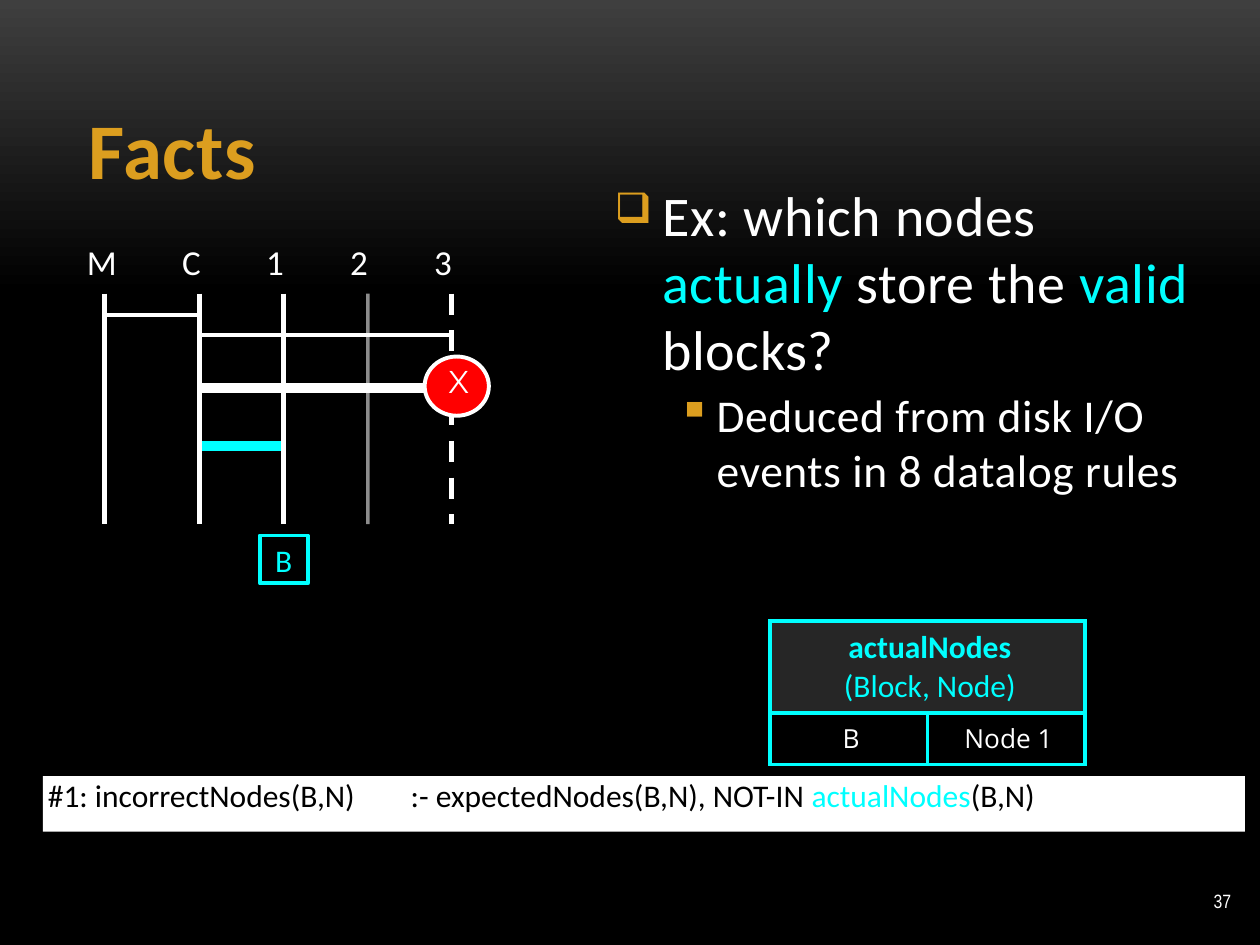
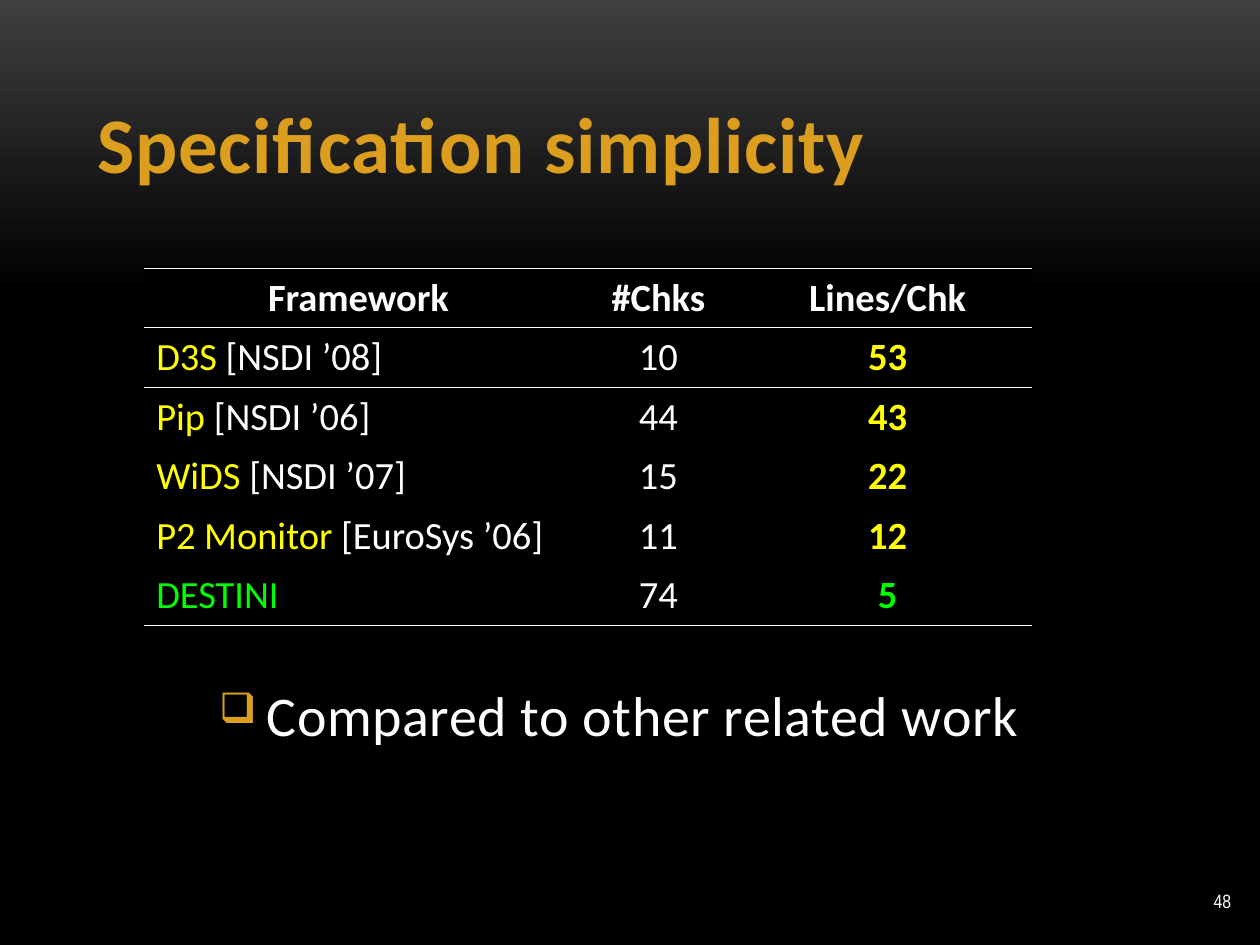
import dataclasses

import lxml.etree
import pptx
import pptx.dml.color
import pptx.enum.dml
import pptx.enum.shapes
import pptx.enum.text
import pptx.oxml.ns
import pptx.util

Align = pptx.enum.text.PP_ALIGN
Anchor = pptx.enum.text.MSO_ANCHOR
Shape = pptx.enum.shapes.MSO_SHAPE
Pt = pptx.util.Pt
qn = pptx.oxml.ns.qn

COLS = 100  # the slide is a grid of 100 columns by 75 square rows
WIDE, HIGH = pptx.util.Inches(10), pptx.util.Inches(7.5)
PLAIN_TABLE = "{2D5ABB26-0587-4C30-8999-92F81FD0307C}"


@dataclasses.dataclass(frozen=True)
class Theme:
    face: str = "Calibri"
    foot_face: str = "Arial Narrow"
    cell_face: str = "Open Sans"
    mark_face: str = "Montserrat"
    gold: str = "DC9E1F"
    white: str = "FFFFFF"
    black: str = "000000"
    gray: str = "3F3F3F"
    dark: str = "262626"
    cyan: str = "00FFFF"
    red: str = "FF0000"
    yellow: str = "FFFF00"
    green: str = "00FF00"
    title: int = 45
    body: int = 32
    sub: int = 26
    grid: int = 22
    lane: int = 20
    label: int = 18
    cell: int = 15
    foot: int = 11


T = Theme()


def unit(count):
    """Length of a number of grid columns or rows."""
    return round(WIDE * count / COLS)


def area(*counts):
    return [unit(count) for count in counts]


def rgb(code):
    return pptx.dml.color.RGBColor.from_string(code)


def add_node(parent, tag, **attrs):
    return lxml.etree.SubElement(parent, qn(tag), attrs)


def say(par, text, size, color=T.white, face=T.face, bold=False, space=0):
    """Add one run; space is the letter spacing in points."""
    run = par.add_run()
    run.text = text
    run.font.size, run.font.name, run.font.bold = Pt(size), face, bold
    run.font.color.rgb = rgb(color)
    if space:
        run._r.get_or_add_rPr().set("spc", str(round(space * 100)))


def indent(par, left, first=0):
    props = par._p.get_or_add_pPr()
    props.set("marL", str(unit(left)))
    props.set("indent", str(unit(first)))
    return props


def set_frame(frame, anchor=Anchor.TOP, pad=(1, 0.5, 1, 0.5)):
    """Wrap the text and set insets: left, top, right, bottom."""
    frame.word_wrap = True
    frame.auto_size = pptx.enum.text.MSO_AUTO_SIZE.NONE
    frame.vertical_anchor = anchor
    (frame.margin_left, frame.margin_top,
     frame.margin_right, frame.margin_bottom) = area(*pad)
    return frame.paragraphs[0]


def add_text(slide, box, **look):
    return set_frame(slide.shapes.add_textbox(*area(*box)).text_frame, **look)


def add_shape(slide, kind, box, fill, edge=None, **look):
    """Draw a filled shape and return its first paragraph."""
    shape = slide.shapes.add_shape(kind, *area(*box))
    shape.shadow.inherit = False
    shape.fill.solid()
    shape.fill.fore_color.rgb = rgb(fill)
    if edge:
        shape.line.color.rgb = rgb(edge)
        shape.line.width = Pt(2.25)
    else:
        shape.line.fill.background()
    return set_frame(shape.text_frame, **look)


def add_line(slide, start, end, width, color=T.white, dash=False, alpha=None):
    line = slide.shapes.add_connector(
        pptx.enum.shapes.MSO_CONNECTOR.STRAIGHT, *area(*start, *end))
    line.line.color.rgb = rgb(color)
    line.line.width = Pt(width)
    if dash:
        line.line.dash_style = pptx.enum.dml.MSO_LINE.DASH
    props = line._element.spPr
    if alpha:
        tint = next(props.iter(qn("a:srgbClr")))
        add_node(tint, "a:alpha", val=str(alpha * 1000))
    add_node(props, "a:effectLst")


def add_point(par, runs, size, mark, left, hang, before, scale=100):
    """Fill a bulleted paragraph with (text, colour) runs."""
    par.space_before = Pt(before)
    props = indent(par, left, -hang)
    add_node(add_node(props, "a:buClr"), "a:srgbClr", val=T.gold)
    add_node(props, "a:buSzPct", val=str(scale * 1000))
    add_node(props, "a:buChar", char=mark)
    for text, color in runs:
        say(par, text, size, color, space=0.3)


def add_head(par, *runs):
    add_point(par, runs, T.body, "❑", 3.8, 3.8, 15, 75)


def add_table(slide, place, cols, rows):
    frame = slide.shapes.add_table(
        len(rows), len(cols), *area(*place, sum(cols), sum(rows)))
    table = frame.table
    table.first_row = table.horz_banding = False
    table._tbl.tblPr.find(qn("a:tableStyleId")).text = PLAIN_TABLE
    for col, width in zip(table.columns, cols):
        col.width = unit(width)
    for row, height in zip(table.rows, rows):
        row.height = unit(height)
    return table


def set_cell(cell, fill=None, edges="", color=T.white, width=0.75):
    """Fill a cell and rule its edges, given as letters in L R T B order."""
    if fill:
        cell.fill.solid()
        cell.fill.fore_color.rgb = rgb(fill)
    else:
        cell.fill.background()
    props = cell._tc.get_or_add_tcPr()
    for place, edge in enumerate(edges):
        rule = add_node(props, "a:ln" + edge, w=str(Pt(width)))
        add_node(add_node(rule, "a:solidFill"), "a:srgbClr", val=color)
        props.insert(place, rule)


def set_back(deck):
    fill = deck.slide_master.background.fill
    fill.gradient()
    fill.gradient_angle = 270
    for stop, (place, color) in zip(
            fill.gradient_stops, [(0, T.gray), (0.31, T.black)]):
        stop.position = place
        stop.color.rgb = rgb(color)


def add_slide(deck, title, box, number):
    slide = deck.slides.add_slide(deck.slide_layouts[5])
    head = slide.shapes.title
    head.left, head.top, head.width, head.height = area(*box)
    par = set_frame(head.text_frame, Anchor.BOTTOM)
    par.alignment = Align.LEFT
    say(par, title, T.title, T.gold, bold=True, space=0.5)
    foot = add_text(slide, (87.9, 69.5, 10.8, 4), anchor=Anchor.MIDDLE)
    foot.alignment = Align.RIGHT
    say(foot, str(number), T.foot, face=T.foot_face)
    return slide


def draw_lanes(slide):
    """Message diagram: one upright lane per node, calls between them."""
    top, base = 23.3, 41.6
    lanes = {"M": 8.3} | {name: 15.85 + 6.67 * i for i, name in enumerate("C123")}
    calls = [("C", "3", 26.6, 2, T.white), ("C", "3", 30.8, 6, T.white),
             ("C", "1", 35.4, 6, T.cyan), ("M", "C", 25, 2, T.white)]
    for source, target, row, width, color in calls:
        add_line(slide, (lanes[source], row), (lanes[target], row), width, color)
    looks = {"2": dict(width=2, alpha=54), "3": dict(width=3, dash=True)}
    for name, col in lanes.items():
        add_line(slide, (col, top), (col, base), **looks.get(name, dict(width=3)))
        par = add_text(slide, (col - 1.8, 19.1, 3.2, 3.4), pad=(0, 0, 0, 0))
        indent(par, 0.4)
        say(par, name, T.lane)
    fail = add_shape(slide, Shape.OVAL, (33.7, 28.3, 5.1, 4.7), T.red, T.white,
                     anchor=Anchor.MIDDLE, pad=(0.3, 0, 0, 0.8))
    fail.alignment = Align.CENTER
    say(fail, "X", T.label, face=T.mark_face)
    side = 3.8
    block = add_shape(slide, Shape.RECTANGLE,
                      (lanes["1"] - side / 2, 42.5, side, side), T.black, T.cyan,
                      anchor=Anchor.MIDDLE, pad=(0, 0, 0, 0))
    block.alignment = Align.CENTER
    say(block, "B", T.label, T.cyan)


def draw_nodes(slide):
    """Table of the facts held in actualNodes."""
    table = add_table(slide, (61.1, 49.3), [12.5, 12.5], [7.2, 4])
    table.cell(0, 0).merge(table.cell(0, 1))
    lines = {(0, 0): ["actualNodes", "(Block, Node)"],
             (1, 0): ["B"], (1, 1): ["Node 1"]}
    for row in range(2):
        for col in range(2):
            cell = table.cell(row, col)
            set_cell(cell, T.black if row else T.dark, "LRTB", T.cyan, 2.25)
            cell.margin_left = cell.margin_right = unit(0.6)
            cell.margin_top = cell.margin_bottom = unit(0.6)
            for i, text in enumerate(lines.get((row, col), [])):
                frame = cell.text_frame
                par = frame.add_paragraph() if i else frame.paragraphs[0]
                par.alignment = Align.CENTER
                indent(par, 0.4)
                if row:
                    say(par, text, T.cell, face=T.cell_face)
                else:
                    say(par, text, T.label, T.cyan, bold=i == 0)


def draw_facts(deck):
    slide = add_slide(deck, "Facts", (6, 6.1, 94, 9.9), 37)
    par = add_text(slide, (47.8, 13.8, 48.2, 29.9))
    add_head(par, ("Ex: which nodes ", T.white), ("actually ", T.cyan),
             ("store the ", T.white), ("valid ", T.cyan), ("blocks?", T.white))
    sub = slide.shapes[-1].text_frame.add_paragraph()
    add_point(sub, [("Deduced from disk I/O events in 8 datalog rules", T.white)],
              T.sub, "▪", 8.1, 3.1, 3)
    draw_nodes(slide)
    draw_lanes(slide)
    rule = add_shape(slide, Shape.RECTANGLE, (3.4, 61.6, 95.4, 4.4), T.white,
                     pad=(0, 0, 0.4, 0))
    rule.alignment = Align.LEFT
    indent(rule, 4.2, -3.8)
    for text, color in [
            ("#1: incorrectNodes(B,N) \t:- expectedNodes(B,N), NOT-IN ", T.black),
            ("actualNodes", T.cyan), ("(B,N)", T.black)]:
        say(rule, text, T.label, color)


def draw_specs(deck):
    slide = add_slide(deck, "Specification simplicity", (6.7, 3, 86.7, 12.5), 48)
    add_head(add_text(slide, (16.4, 53.5, 77, 16)),
             ("Compared to other related work", T.white))
    works = [("D3S", " [NSDI ’08]", 10, 53), ("Pip", " [NSDI ’06]", 44, 43),
             ("WiDS ", "[NSDI ’07]", 15, 22),
             ("P2 Monitor ", "[EuroSys ’06]", 11, 12), ("DESTINI", "", 74, 5)]
    table = add_table(slide, (11.4, 21.3), [34.1, 13.5, 22.9],
                      [4.72] * (len(works) + 1))
    for col, text in enumerate(["Framework", "#Chks", "Lines/Chk"]):
        cell = table.cell(0, col)
        set_cell(cell, T.black, "TB")
        par = cell.text_frame.paragraphs[0]
        par.alignment = Align.CENTER
        say(par, text, T.grid, bold=True)
    for row, (name, venue, checks, lines) in enumerate(works, 1):
        last = row == len(works)
        color = T.green if last else T.yellow
        cells = [table.cell(row, col) for col in range(3)]
        for cell in cells:
            set_cell(cell, edges="T" if row == 1 else "B" if last else "")
        first, second, third = [cell.text_frame.paragraphs[0] for cell in cells]
        second.alignment = third.alignment = Align.CENTER
        say(first, name, T.grid, color)
        if venue:
            say(first, venue, T.grid)
        say(second, str(checks), T.grid)
        say(third, str(lines), T.grid, color, bold=True)


def main():
    deck = pptx.Presentation()
    deck.slide_width, deck.slide_height = WIDE, HIGH
    set_back(deck)
    draw_facts(deck)
    draw_specs(deck)
    deck.save("out.pptx")


if __name__ == "__main__":
    main()
